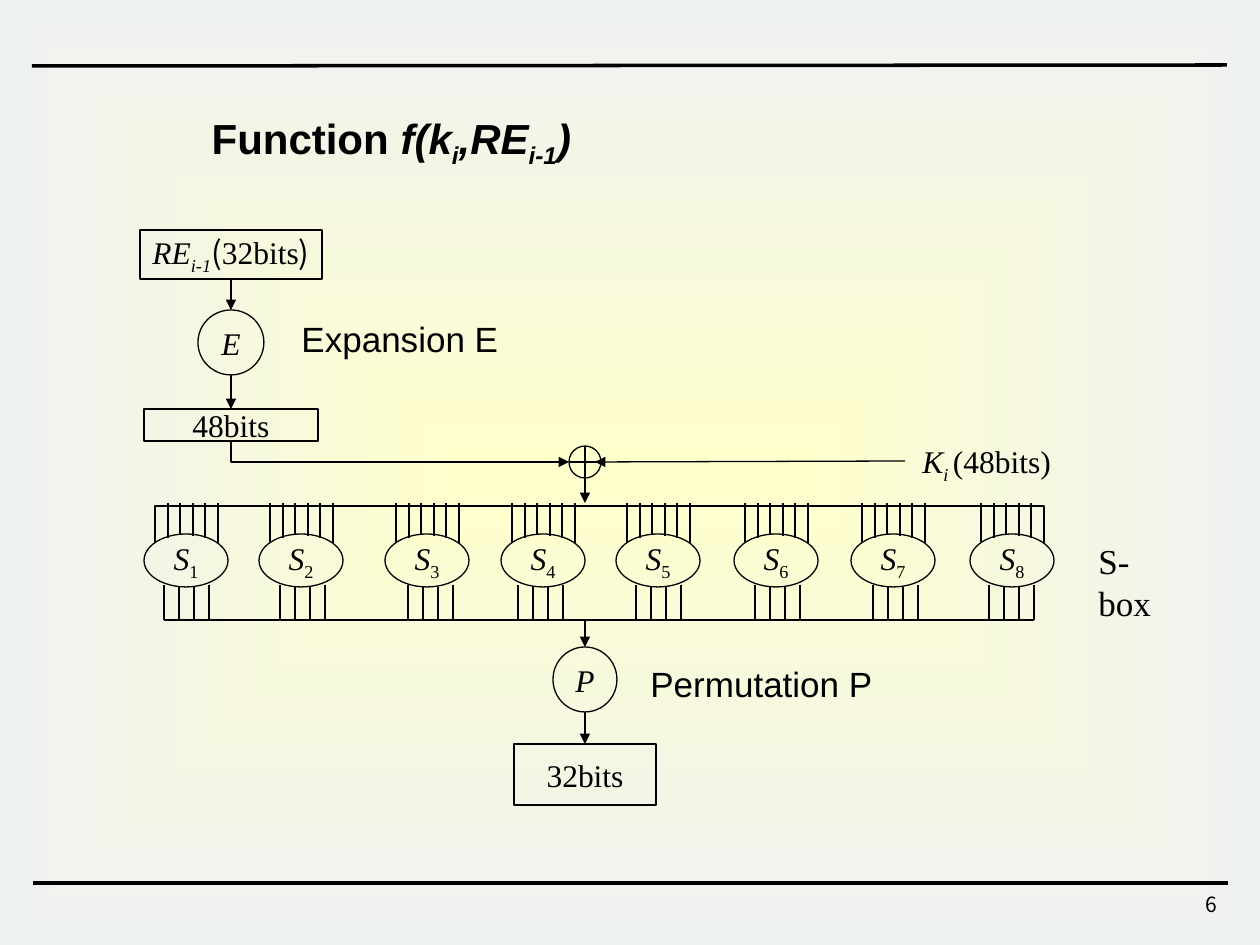
import dataclasses
import typing

import lxml.etree
import pptx
import pptx.dml.color
import pptx.enum.dml
import pptx.enum.shapes
import pptx.enum.text
import pptx.oxml
import pptx.oxml.ns
import pptx.util

EMU_PER_PX = 914400 / 126
SHAPES = pptx.enum.shapes.MSO_SHAPE
ALIGN = pptx.enum.text.PP_ALIGN
ANCHOR = pptx.enum.text.MSO_ANCHOR
qn = pptx.oxml.ns.qn


@dataclasses.dataclass(frozen=True)
class Theme:
    ink: str = "000000"
    glow: str = "FFFFCC"
    edge: str = "EEF1F2"
    sans: str = "Arial"
    serif: str = "Times New Roman"
    cjk: str = "Noto Sans CJK KR"
    title_size: int = 24
    caption_size: int = 20
    node_size: int = 18
    number_size: int = 12
    thin: float = 0.75
    thick: float = 2


THEME = Theme()


class Box(typing.NamedTuple):
    left: int
    top: int
    width: int
    height: int


class Point(typing.NamedTuple):
    x: int
    y: int


class Run(typing.NamedTuple):
    text: str
    italic: bool = False
    subscript: bool = False
    font: str = THEME.serif


class SBox(typing.NamedTuple):
    left: int
    first_output: int


class Label(typing.NamedTuple):
    box: Box
    runs: list[Run]
    size: int
    align: typing.Any = ALIGN.LEFT


RULES = [(Point(32, 66), Point(1227, 65)), (Point(33, 883), Point(1228, 883))]
TITLE = [
    Run("Function ", font=THEME.sans),
    Run("f(k", True, font=THEME.sans),
    Run("i", True, True, THEME.sans),
    Run(",RE", True, font=THEME.sans),
    Run("i-1", True, True, THEME.sans),
    Run(")", True, font=THEME.sans),
]
HALF_BLOCK = [
    Run("RE", True), Run("i-1", True, True),
    Run("(", font=THEME.cjk), Run("32bits"), Run(")", font=THEME.cjk),
]
LABELS = [
    Label(Box(910, 436, 202, 50),
          [Run("K", True), Run("i ", True, True), Run("(48bits)")], THEME.node_size),
    Label(Box(289, 311, 222, 54), [Run("Expansion E", font=THEME.sans)], THEME.caption_size),
    Label(Box(638, 656, 247, 54), [Run("Permutation P", font=THEME.sans)], THEME.caption_size),
    Label(Box(1086, 533, 108, 54), [Run("S-box")], THEME.caption_size),
    Label(Box(968, 885, 262, 42), [Run("6", font=THEME.cjk)], THEME.number_size, ALIGN.RIGHT),
]
S_BOXES = [
    SBox(144, 164), SBox(259, 280), SBox(385, 408), SBox(501, 518),
    SBox(616, 636), SBox(734, 755), SBox(851, 873), SBox(970, 989),
]
S_BOX_TOP, S_BOX_WIDTH, S_BOX_HEIGHT = 534, 84, 53
INPUT_TOP, INPUT_BUS, OUTPUT_BUS = 503, 506, 620
INPUT_ENDS = [Point(11, 542), Point(24, 538), Point(36, 534),
              Point(49, 536), Point(61, 538), Point(74, 543)]
OUTPUT_STARTS = [Point(0, 585), Point(15, 586), Point(30, 587), Point(45, 585)]


def px(length: int) -> int:
    return pptx.util.Emu(round(length * EMU_PER_PX))


def apply(target: typing.Any, formats: dict[str, typing.Any]) -> None:
    for name, value in formats.items():
        setattr(target, name, value)


def color(value: str) -> pptx.dml.color.RGBColor:
    return pptx.dml.color.RGBColor.from_string(value)


def write(shape, runs: list[Run], size: int, align, frame_formats: dict, bold=False) -> None:
    apply(shape.text_frame, {"word_wrap": False, **frame_formats})
    paragraph = shape.text_frame.paragraphs[0]
    paragraph.alignment = align
    for item in runs:
        run = paragraph.add_run()
        run.text = item.text
        apply(run.font, {"name": item.font, "size": pptx.util.Pt(size),
                         "bold": bold, "italic": item.italic})
        run.font.color.rgb = color(THEME.ink)
        if item.subscript:
            run._r.get_or_add_rPr().set("baseline", "-25000")


def style_line(shape, width: float, arrow: bool = False) -> None:
    shape.line.color.rgb = color(THEME.ink)
    shape.line.width = pptx.util.Pt(width)
    if arrow:
        lxml.etree.SubElement(shape.line._get_or_add_ln(), qn("a:tailEnd"), type="triangle")


def add_node(slide, kind, box: Box, runs: typing.Sequence[Run] = ()):
    shape = slide.shapes.add_shape(kind, *map(px, box))
    shape.shadow.inherit = False
    shape.fill.background()
    style_line(shape, THEME.thin)
    if runs:
        insets = dict.fromkeys(("margin_left", "margin_right", "margin_top", "margin_bottom"), 0)
        write(shape, runs, THEME.node_size, ALIGN.CENTER,
              {"vertical_anchor": ANCHOR.MIDDLE, **insets})
    return shape


def add_line(slide, start: Point, end: Point, width=THEME.thin, arrow=False):
    line = slide.shapes.add_connector(
        pptx.enum.shapes.MSO_CONNECTOR.STRAIGHT, *map(px, (*start, *end)))
    style_line(line, width, arrow)
    lxml.etree.SubElement(line._element.spPr, qn("a:effectLst"))
    return line


def add_polyline(slide, points: list[Point], arrow=False) -> None:
    builder = slide.shapes.build_freeform(*points[0], scale=EMU_PER_PX)
    builder.add_line_segments(points[1:], close=False)
    shape = builder.convert_to_shape()
    shape.shadow.inherit = False
    shape.fill.background()
    style_line(shape, THEME.thin, arrow)


def paint_background(slide) -> None:
    """Fill the background with a gradient glowing from the slide's middle."""
    fill = slide.background.fill
    fill.gradient()
    for stop, value in zip(fill.gradient_stops, (THEME.glow, THEME.edge)):
        stop.color.rgb = color(value)
    linear = slide._element.find(".//" + qn("a:lin"))
    linear.getparent().replace(linear, pptx.oxml.parse_xml(
        f'<a:path {pptx.oxml.ns.nsdecls("a")} path="shape">'
        '<a:fillToRect l="50000" t="50000" r="50000" b="50000"/></a:path>'))


def add_s_boxes(slide) -> None:
    """Draw the S-boxes with six inputs and four outputs each, and both buses."""
    bus_left = S_BOXES[0].left + INPUT_ENDS[0].x
    bus_right = S_BOXES[-1].left + INPUT_ENDS[-1].x
    add_polyline(slide, [Point(bus_left, INPUT_ENDS[0].y), Point(bus_left, INPUT_BUS),
                         Point(bus_right, INPUT_BUS), Point(bus_right, INPUT_ENDS[-1].y)])
    for number, s_box in enumerate(S_BOXES, 1):
        add_node(slide, SHAPES.OVAL, Box(s_box.left, S_BOX_TOP, S_BOX_WIDTH, S_BOX_HEIGHT),
                 [Run("S", True), Run(str(number), subscript=True)])
        for offset, bottom in INPUT_ENDS:
            x = s_box.left + offset
            if x not in (bus_left, bus_right):
                add_line(slide, Point(x, INPUT_TOP), Point(x, bottom))
        for offset, top in OUTPUT_STARTS:
            x = s_box.first_output + offset
            add_line(slide, Point(x, top), Point(x, OUTPUT_BUS))
    add_line(slide, Point(S_BOXES[0].first_output, OUTPUT_BUS),
             Point(S_BOXES[-1].first_output + OUTPUT_STARTS[-1].x, OUTPUT_BUS))


def add_flow(slide) -> None:
    """Draw the expansion, key mixing and permutation steps with their arrows."""
    half_block = add_node(slide, SHAPES.RECTANGLE, Box(140, 230, 182, 49), HALF_BLOCK)
    expansion = add_node(slide, SHAPES.OVAL, Box(198, 310, 66, 65), [Run("E", True)])
    expanded = add_node(slide, SHAPES.RECTANGLE, Box(144, 409, 174, 32), [Run("48bits")])
    add_node(slide, SHAPES.FLOWCHART_OR, Box(569, 446, 32, 32))
    permutation = add_node(slide, SHAPES.OVAL, Box(553, 647, 64, 65), [Run("P", True)])
    result = add_node(slide, SHAPES.RECTANGLE, Box(514, 744, 142, 61), [Run("32bits")])

    into_expansion = add_line(slide, Point(231, 279), Point(231, 310), arrow=True)
    into_expansion.begin_connect(half_block, 2)
    into_expansion.end_connect(expansion, 0)
    add_line(slide, Point(231, 375), Point(231, 409), arrow=True).end_connect(expanded, 0)
    add_polyline(slide, [Point(231, 441), Point(231, 462), Point(569, 462)], arrow=True)
    add_line(slide, Point(905, 461), Point(595, 462), arrow=True)
    add_line(slide, Point(585, 478), Point(585, INPUT_TOP), arrow=True)
    add_line(slide, Point(585, OUTPUT_BUS), Point(585, 647), arrow=True).end_connect(permutation, 0)
    add_line(slide, Point(585, 712), Point(585, 744), arrow=True).end_connect(result, 0)


def main() -> None:
    presentation = pptx.Presentation()
    apply(presentation, {"slide_width": px(1260), "slide_height": px(945)})
    slide = presentation.slides.add_slide(presentation.slide_layouts[5])
    paint_background(slide)
    for start, end in RULES:
        add_line(slide, start, end, THEME.thick)
    title = slide.shapes.title
    apply(title, dict(zip(Box._fields, map(px, Box(199, 106, 402, 63)))))
    write(title, TITLE, THEME.title_size, ALIGN.LEFT, {"vertical_anchor": ANCHOR.TOP}, bold=True)
    add_flow(slide)
    add_s_boxes(slide)
    for label in LABELS:
        text_box = slide.shapes.add_textbox(*map(px, label.box))
        write(text_box, label.runs, label.size, label.align, {"word_wrap": True})
    presentation.save("out.pptx")


if __name__ == "__main__":
    main()
